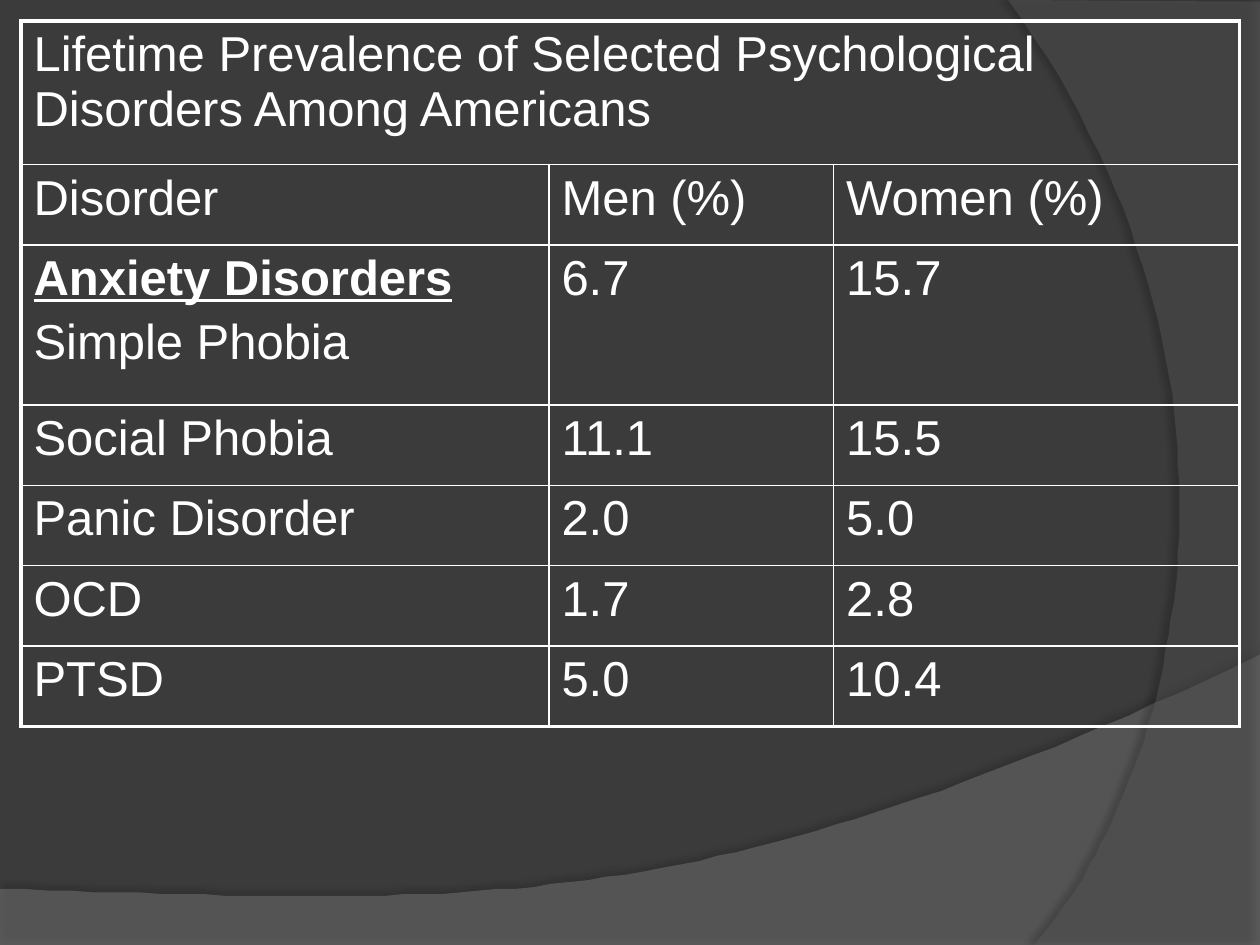
from lxml import etree
from pptx import Presentation
from pptx.dml.color import RGBColor
from pptx.oxml.ns import qn
from pptx.util import Pt

WIDTH, HEIGHT = 720, 540
THICK, THIN = 2.25, 1
COLORS = {"background": "3B3B3B", "wave": "7F7F7F", "arc": "5E5E5E",
          "shadow": "000000", "text": "FFFFFF", "border": "FFFFFF"}

TITLE = "Lifetime Prevalence of Selected Psychological Disorders Among Americans"
ROWS = [
    (TITLE, "", ""),
    ("Disorder", "Men (%)", "Women (%)"),
    ("Anxiety Disorders\nSimple Phobia", "6.7", "15.7"),
    ("Social Phobia", "11.1", "15.5"),
    ("Panic Disorder", "2.0", "5.0"),
    ("OCD", "1.7", "2.8"),
    ("PTSD", "5.0", "10.4"),
]
COLUMN_WIDTHS = [301.7, 162.7, 231.8]
ROW_HEIGHTS = [82, 45.9, 91.6] + [45.9] * 4


def curve(start, control_1, control_2, end, steps=60):
    """Points along a cubic Bezier curve, both ends included."""
    points = []
    for step in range(steps + 1):
        t = step / steps
        weights = ((1 - t) ** 3, 3 * t * (1 - t) ** 2, 3 * t * t * (1 - t), t ** 3)
        corners = (start, control_1, control_2, end)
        points.append(tuple(sum(w * c[axis] for w, c in zip(weights, corners))
                            for axis in (0, 1)))
    return points


def add_color(parent, name, opacity=100):
    color = etree.SubElement(parent, qn("a:srgbClr"), val=COLORS[name])
    if opacity < 100:
        etree.SubElement(color, qn("a:alpha"), val=str(opacity * 1000))


class SlideBuilder:
    font = "Arial"
    size = 28
    space_before = 5.6

    def __init__(self, slide):
        self.slide = slide

    def background(self, color):
        fill = self.slide.background.fill
        fill.solid()
        fill.fore_color.rgb = RGBColor.from_string(COLORS[color])

    def swoosh(self, points, color, opacity, shadow_opacity, distance, direction):
        builder = self.slide.shapes.build_freeform(*points[0], scale=Pt(1))
        builder.add_line_segments(points[1:], close=True)
        shape = builder.convert_to_shape()
        shape.line.fill.background()
        shape.fill.solid()
        shape.fill.fore_color.rgb = RGBColor.from_string(COLORS[color])
        fill_color = shape.fill._xPr.find(qn("a:solidFill"))[0]
        etree.SubElement(fill_color, qn("a:alpha"), val=str(opacity * 1000))
        # Soft outer shadow
        shape.shadow.inherit = False
        effects = shape._element.spPr.find(qn("a:effectLst"))
        shadow = etree.SubElement(effects, qn("a:outerShdw"), blurRad=str(Pt(4)),
                                  dist=str(Pt(distance)), dir=str(direction * 60000),
                                  algn="ctr", rotWithShape="0")
        add_color(shadow, "shadow", shadow_opacity)

    def table(self, left, top, widths, heights, rows):
        frame = self.slide.shapes.add_table(len(rows), len(widths), Pt(left), Pt(top),
                                            Pt(sum(widths)), Pt(sum(heights)))
        table = frame.table
        table.first_row = table.horz_banding = False
        for column, width in zip(table.columns, widths):
            column.width = Pt(width)
        for row, height in zip(table.rows, heights):
            row.height = Pt(height)
        table.cell(0, 0).merge(table.cell(0, len(widths) - 1))
        last_row, last_column = len(rows) - 1, len(widths) - 1
        for r, texts in enumerate(rows):
            for c, text in enumerate(texts):
                cell = table.cell(r, c)
                self.borders(cell, {"L": c == 0, "R": c == last_column or r == 0,
                                    "T": r == 0, "B": r == last_row})
                cell.fill.background()
                if text:
                    self.cell_text(cell, text)
        return table

    def borders(self, cell, outer_sides):
        properties = cell._tc.get_or_add_tcPr()
        for side, is_outer in outer_sides.items():
            line = etree.SubElement(properties, qn("a:ln" + side),
                                    w=str(Pt(THICK if is_outer else THIN)))
            add_color(etree.SubElement(line, qn("a:solidFill")), "border")

    def cell_text(self, cell, text):
        cell.text_frame.text = text
        for paragraph in cell.text_frame.paragraphs:
            paragraph.space_before = Pt(self.space_before)
            paragraph.font.name = self.font
            paragraph.font.size = Pt(self.size)
            paragraph.font.color.rgb = RGBColor.from_string(COLORS["text"])


def main():
    presentation = Presentation()
    presentation.slide_width, presentation.slide_height = Pt(WIDTH), Pt(HEIGHT)
    builder = SlideBuilder(presentation.slides.add_slide(presentation.slide_layouts[6]))

    # Backdrop: a wave along the bottom and an arc down the right side
    builder.background("background")
    wave = curve((WIDTH, 374.4), (402.5, 524.9), (281.5, 517.7), (0, 507.6))
    builder.swoosh([(0, HEIGHT), (WIDTH, HEIGHT)] + wave, "wave", 45, 35, 3.5, 270)
    arc = curve((591.1, HEIGHT), (673.2, 445.7), (733, 216), (576, 0))
    builder.swoosh([(WIDTH, 1.4), (WIDTH, HEIGHT)] + arc, "arc", 40, 45, 4, 180)

    # Prevalence table with its underlined group heading
    prevalence = builder.table(12, 12, COLUMN_WIDTHS, ROW_HEIGHTS, ROWS)
    group_heading = prevalence.cell(2, 0).text_frame.paragraphs[0]
    group_heading.font.bold = group_heading.font.underline = True

    presentation.save("out.pptx")


if __name__ == "__main__":
    main()
